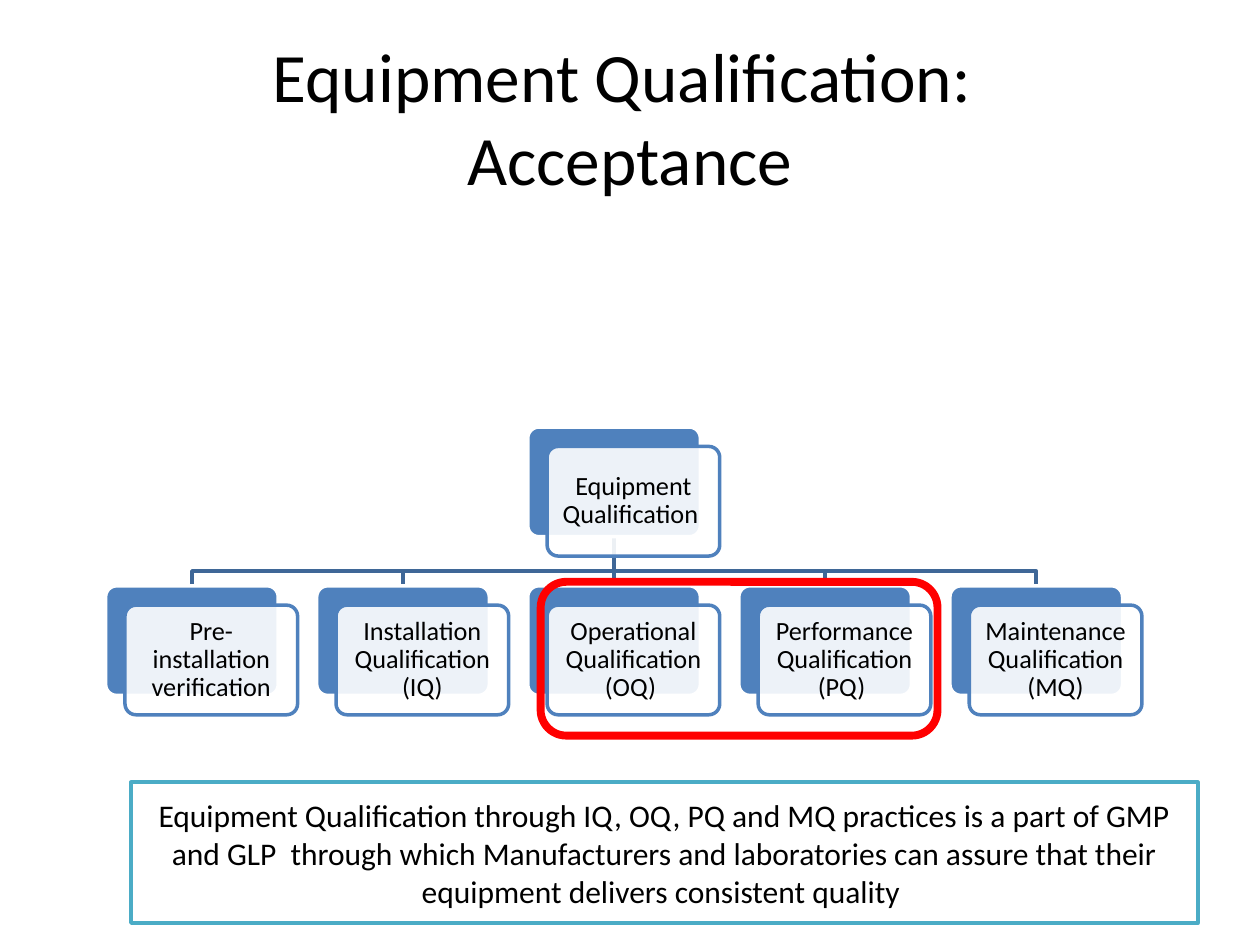
from lxml import etree
from pptx import Presentation
from pptx.dml.color import RGBColor
from pptx.enum.shapes import MSO_CONNECTOR, MSO_SHAPE
from pptx.enum.text import MSO_ANCHOR, PP_ALIGN
from pptx.oxml.ns import qn
from pptx.util import Cm, Pt

RECT, ROUND = MSO_SHAPE.RECTANGLE, MSO_SHAPE.ROUNDED_RECTANGLE
LINE = MSO_CONNECTOR.STRAIGHT
MIDDLE, CENTER = MSO_ANCHOR.MIDDLE, PP_ALIGN.CENTER

COLORS = {"text": "000000", "white": "FFFFFF", "blue": "4F81BD",
          "link": "3F6797", "teal": "4BACC6", "red": "FF0000"}
FONT = "Calibri"

# Chart grid, in cm
LEFT, PITCH = 2.13, 4.255
WIDE, HIGH, SHIFT = 3.48, 2.21, 0.39
TOP, BUS, ROW = 8.61, 11.51, 11.81

STEPS = ["Pre-installation verification",
         "Installation Qualification (IQ)",
         "Operational Qualification (OQ) ",
         "Performance Qualification (PQ) ",
         "Maintenance Qualification (MQ)"]
NOTE = ("Equipment Qualification through IQ, OQ, PQ and MQ practices is a part "
        "of GMP and GLP  through which Manufacturers and laboratories can "
        "assure that their equipment delivers consistent quality ")


def color(name):
    return RGBColor.from_string(COLORS[name])


def stroke(shape, name, width=2):
    shape.line.color.rgb = color(name)
    shape.line.width = Pt(width)


def write(shape, text, size, inset=None, space=None):
    frame = shape.text_frame
    frame.word_wrap = True
    frame.vertical_anchor = MIDDLE
    if inset is not None:
        frame.margin_left = frame.margin_right = Cm(inset)
        frame.margin_top = frame.margin_bottom = Cm(inset)
    para = frame.paragraphs[0]
    para.text = text
    para.alignment = CENTER
    para.line_spacing = space
    para.font.size = Pt(size)
    para.font.name = FONT
    para.font.color.rgb = color("text")


def add_box(slide, kind, area, fill, edge, width=2, alpha=None):
    box = slide.shapes.add_shape(kind, *map(Cm, area))
    box.shadow.inherit = False
    stroke(box, edge, width)
    if fill is None:
        box.fill.background()
        return box
    box.fill.solid()
    box.fill.fore_color.rgb = color(fill)
    if alpha:
        tint = box.fill._xPr.find(qn("a:solidFill"))[0]
        etree.SubElement(tint, qn("a:alpha"), val=str(alpha * 1000))
    return box


def add_card(slide, left, top, text):
    back = add_box(slide, ROUND, (left, top, WIDE, HIGH), "blue", "white")
    front = add_box(slide, ROUND, (left + SHIFT, top + SHIFT, WIDE, HIGH),
                    "white", "blue", alpha=90)
    for box in (back, front):
        box.adjustments[0] = 0.1
    write(front, text, 15, inset=0.15, space=0.9)


def add_link(slide, start, end):
    top = TOP + HIGH
    if start == end:
        link = slide.shapes.add_connector(
            LINE, Cm(start), Cm(top), Cm(end), Cm(ROW))
        etree.SubElement(link._element.spPr, qn("a:effectLst"))
        stroke(link, "link")
        # The effect list must follow the line
        link._element.spPr.append(link._element.spPr.find(qn("a:effectLst")))
        return
    path = slide.shapes.build_freeform(Cm(start), Cm(top))
    path.add_line_segments([(Cm(start), Cm(BUS)), (Cm(end), Cm(BUS)),
                            (Cm(end), Cm(ROW))], close=False)
    link = path.convert_to_shape()
    link.shadow.inherit = False
    link.fill.background()
    stroke(link, "link")


def main():
    deck = Presentation()
    deck.slide_width, deck.slide_height = Cm(25.4), Cm(19.05)
    slide = deck.slides.add_slide(deck.slide_layouts[6])

    # Title
    title = slide.shapes.add_textbox(Cm(1.27), Cm(0.76), Cm(22.86), Cm(3.18))
    write(title, "Equipment Qualification: \vAcceptance", 39.6)

    # Links, then cards over them
    spots = [LEFT + i * PITCH for i in range(len(STEPS))]
    root = spots[len(spots) // 2]
    for spot in reversed(spots):
        add_link(slide, root + WIDE / 2, spot + WIDE / 2)
    add_card(slide, root, TOP, "Equipment Qualification ")
    for spot, step in zip(spots, STEPS):
        add_card(slide, spot, ROW, step)

    # Note
    note = add_box(slide, RECT, (2.64, 15.77, 21.51, 2.84), "white", "teal")
    write(note, NOTE, 18)

    # Frame around OQ and PQ
    add_box(slide, ROUND, (10.9, 11.73, 8, 3.1), None, "red", width=4.5)

    deck.save("out.pptx")


if __name__ == "__main__":
    main()
